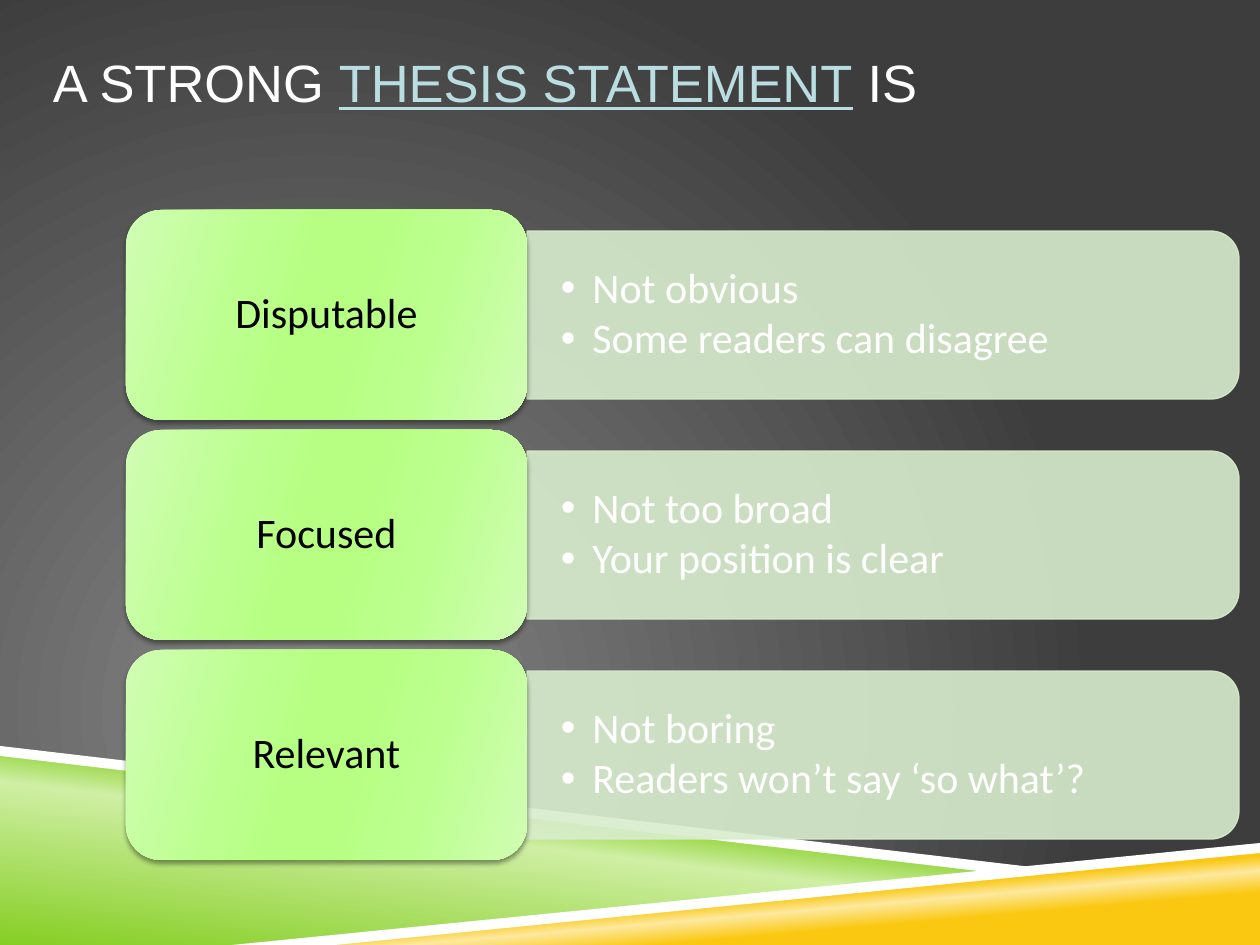
from lxml import etree
from pptx import Presentation
from pptx import util as u
from pptx.dml.color import RGBColor
from pptx.enum import shapes, text
from pptx.oxml.ns import qn

SCALE = 914400 / 126

TITLE = [("A STRONG ", "FFFFFF", False), ("THESIS STATEMENT", "BADDE1", True), (" IS", "FFFFFF", False)]
QUALITIES = [
    ("Disputable", ["Not obvious", "Some readers can disagree"]),
    ("Focused", ["Not too broad", "Your position is clear"]),
    ("Relevant", ["Not boring", "Readers won’t say ‘so what’?"]),
]

BACKDROP = [(0, "878787"), (100, "3D3D3D")]
GREEN = [(0, "86CE24"), (52, "CFEFA4"), (66, "86CE24")]
GOLD = [(28, "FAC810"), (40, "FDE99F"), (48, "FAC810")]
LIME = [(0, "D0FDB3"), (30, "BCFF8F"), (45, "B6FF82"), (55, "B6FF82"), (73, "BCFF8F"), (100, "D0FDB3")]
PALE = "D9EDCD"
BANDS = [
    ([(0, 752), (998, 872), (252, 945), (0, 945)], GREEN, 277),
    ([(249, 945), (1260, 847), (1260, 945)], GOLD, 265),
    ([(0, 746), (0, 756), (995, 873), (1048, 869)], "FFFFFF", None),
    ([(1260, 843), (232, 945), (335, 945), (1260, 853)], "FFFFFF", None),
]

ROW_TOP, ROW_STEP = 210, 220
LABEL_LEFT, LABEL_WIDTH, LABEL_HEIGHT = 126, 401, 210
BAR_WIDTH, BAR_HEIGHT = 712, 168
LABEL_PAD, DETAIL_PAD = 10, 8


def px(length):
    return u.Emu(round(length * SCALE))


def color(hex_code):
    return RGBColor.from_string(hex_code)


def child(parent, tag, **attributes):
    return etree.SubElement(parent, qn(tag), {k: str(v) for k, v in attributes.items()})


def set_gradient(fill, owner, stops, angle=None):
    fill.gradient()
    grad = owner.find(".//" + qn("a:gradFill"))
    for part in list(grad):
        grad.remove(part)
    stop_list = child(grad, "a:gsLst")
    for position, hex_code in stops:
        child(child(stop_list, "a:gs", pos=position * 1000), "a:srgbClr", val=hex_code)
    if angle is None:
        circle = child(grad, "a:path", path="circle")
        child(circle, "a:fillToRect", l=50000, t=100000, r=100000, b=50000)
    else:
        child(grad, "a:lin", ang=angle * 60000, scaled=0)


def paint(shape, fill, angle=None):
    shape.shadow.inherit = False
    shape.line.fill.background()
    if angle is None:
        shape.fill.solid()
        shape.fill.fore_color.rgb = color(fill)
    else:
        set_gradient(shape.fill, shape.element.spPr, fill, angle)


def write(slide, area, paragraphs, font="Calibri", size=24, align=text.PP_ALIGN.LEFT,
          spacing=1.0, after=0, inset=(0, 6), bullet=False):
    box = slide.shapes.add_textbox(*map(px, area))
    frame = box.text_frame
    frame.word_wrap = True
    frame.vertical_anchor = text.MSO_ANCHOR.MIDDLE
    frame.margin_left = frame.margin_right = px(inset[0])
    frame.margin_top = frame.margin_bottom = px(inset[1])
    for index, runs in enumerate(paragraphs):
        paragraph = frame.paragraphs[0] if index == 0 else frame.add_paragraph()
        paragraph.alignment = align
        paragraph.line_spacing = spacing
        paragraph.space_after = u.Pt(after)
        if bullet:
            properties = paragraph._p.get_or_add_pPr()
            properties.set("marL", str(u.Inches(0.25)))
            properties.set("indent", str(-u.Inches(0.25)))
            child(properties, "a:buFont", typeface="Arial")
            child(properties, "a:buChar", char="•")
        for words, hex_code, underline in runs:
            run = paragraph.add_run()
            run.text = words
            run.font.name = font
            run.font.size = u.Pt(size)
            run.font.color.rgb = color(hex_code)
            run.font.underline = underline


def add_band(slide, points, fill, angle):
    builder = slide.shapes.build_freeform(*points[0], scale=SCALE)
    builder.add_line_segments(points[1:], close=True)
    paint(builder.convert_to_shape(), fill, angle)


def add_bar(slide, left, top):
    offset = (BAR_WIDTH - BAR_HEIGHT) / 2
    bar = slide.shapes.add_shape(
        shapes.MSO_SHAPE.ROUND_2_SAME_RECTANGLE,
        *map(px, (left + offset, top - offset, BAR_HEIGHT, BAR_WIDTH)))
    bar.rotation = 90
    paint(bar, PALE)
    bar.line.color.rgb = color(PALE)
    bar.line.width = u.Pt(0.75)
    for tint in bar.element.spPr.iter(qn("a:srgbClr")):
        child(tint, "a:alpha", val=90000)


def add_label(slide, top):
    label = slide.shapes.add_shape(
        shapes.MSO_SHAPE.ROUNDED_RECTANGLE,
        *map(px, (LABEL_LEFT, top, LABEL_WIDTH, LABEL_HEIGHT)))
    paint(label, LIME, 16)
    effects = label.element.spPr.find(qn("a:effectLst"))
    shadow = child(effects, "a:outerShdw", blurRad=u.Pt(3), dist=u.Pt(2), dir=90 * 60000, rotWithShape=0)
    child(child(shadow, "a:srgbClr", val="000000"), "a:alpha", val=40000)


def add_quality(slide, top, quality, details):
    bar_left = LABEL_LEFT + LABEL_WIDTH
    bar_top = top + (LABEL_HEIGHT - BAR_HEIGHT) / 2
    add_bar(slide, bar_left, bar_top)
    write(slide, (bar_left, bar_top + DETAIL_PAD, BAR_WIDTH - DETAIL_PAD, BAR_HEIGHT - 2 * DETAIL_PAD),
          [[(detail, "FFFFFF", False)] for detail in details],
          spacing=0.9, after=3, inset=(34, 18), bullet=True)
    add_label(slide, top)
    write(slide, (LABEL_LEFT + LABEL_PAD, top + LABEL_PAD,
                  LABEL_WIDTH - 2 * LABEL_PAD, LABEL_HEIGHT - 2 * LABEL_PAD),
          [[(quality, "000000", False)]], align=text.PP_ALIGN.CENTER, spacing=0.9, inset=(13, 6))


def main():
    deck = Presentation()
    deck.slide_width, deck.slide_height = px(1260), px(945)
    slide = deck.slides.add_slide(deck.slide_layouts[6])
    set_gradient(slide.background.fill, slide.element, BACKDROP)
    for band in BANDS:
        add_band(slide, *band)
    write(slide, (53, 29, 1207, 105), [TITLE], font="Arial", size=30)
    for row, (quality, details) in enumerate(QUALITIES):
        add_quality(slide, ROW_TOP + row * ROW_STEP, quality, details)
    deck.save("out.pptx")


if __name__ == "__main__":
    main()
